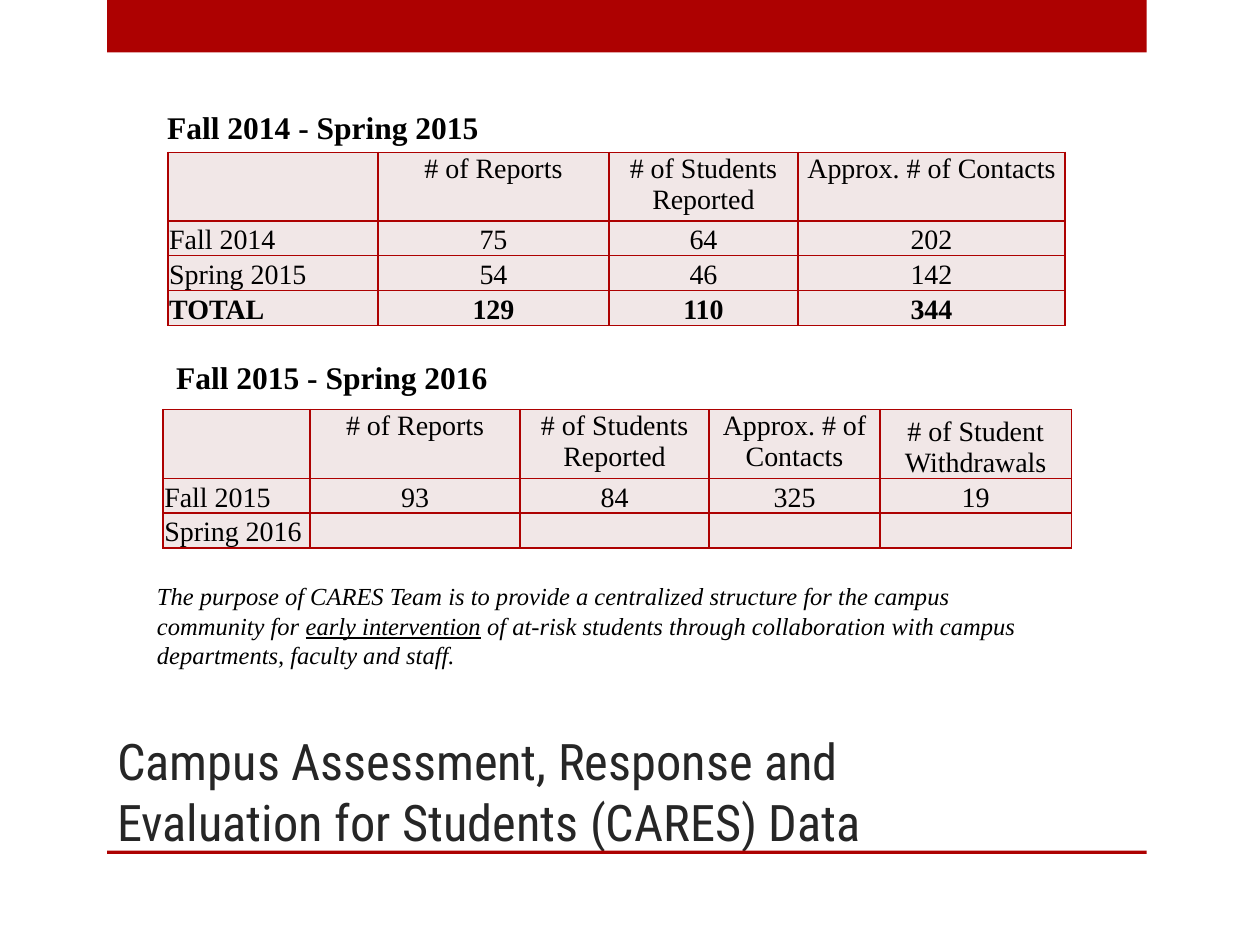
from lxml import etree
from pptx import Presentation
from pptx.dml.color import RGBColor
from pptx.enum import shapes, text
from pptx.oxml import ns
from pptx.util import Pt

COLORS = {"red": "AD0101", "cell": "F1E7E7", "title": "262626", "text": "000000"}
SERIF = "Times New Roman"
CENTER = text.PP_ALIGN.CENTER
TOP, BOTTOM = text.MSO_ANCHOR.TOP, text.MSO_ANCHOR.BOTTOM

YEAR_1 = [
    ["", "# of Reports", "# of Students Reported", "Approx. # of Contacts"],
    ["Fall 2014", "75", "64", "202"],
    ["Spring 2015", "54", "46", "142"],
    ["TOTAL", "129", "110", "344"],
]
YEAR_2 = [
    ["", "# of Reports", "# of Students Reported", "Approx. # of Contacts",
     "# of Student Withdrawals"],
    ["Fall 2015", "93", "84", "325", "19"],
    ["Spring 2016", "", "", "", ""],
]
PURPOSE = [
    ("The purpose of CARES Team is to provide a centralized structure for the "
     "campus community for ", False),
    ("early intervention", True),
    (" of at-risk students through collaboration with campus departments, "
     "faculty and staff.", False),
]


def rgb(name):
    return RGBColor.from_string(COLORS[name])


def add_run(p, content, size=16, font=SERIF, color="text", bold=False,
            italic=False, underline=False):
    r = p.add_run()
    r.text = content
    f = r.font
    f.size, f.name, f.bold, f.italic, f.underline = Pt(size), font, bold, italic, underline
    f.color.rgb = rgb(color)


def add_bar(s, x, y, w, h):
    bar = s.shapes.add_shape(shapes.MSO_SHAPE.RECTANGLE, Pt(x), Pt(y), Pt(w), Pt(h))
    bar.shadow.inherit = False
    bar.fill.solid()
    bar.fill.fore_color.rgb = rgb("red")
    bar.line.fill.background()


def place_title(s, x, y, w, h, content):
    sp = s.shapes.title
    sp.left, sp.top, sp.width, sp.height = Pt(x), Pt(y), Pt(w), Pt(h)
    tf = sp.text_frame
    tf.word_wrap = True
    tf.auto_size = text.MSO_AUTO_SIZE.NONE
    tf.vertical_anchor = BOTTOM
    p = tf.paragraphs[0]
    p.alignment = text.PP_ALIGN.LEFT
    p.line_spacing = Pt(35)
    add_run(p, content, size=28.8, font="Roboto Condensed", color="title")


def add_text(s, x, y, w, h, runs, **fmt):
    """Add a wrapped text box; runs are (text, underlined) pairs."""
    tf = s.shapes.add_textbox(Pt(x), Pt(y), Pt(w), Pt(h)).text_frame
    tf.word_wrap = True
    for content, underline in runs:
        add_run(tf.paragraphs[0], content, underline=underline, **fmt)


def set_borders(cell, color="red", width=1):
    tc_pr = cell._tc.get_or_add_tcPr()
    for i, side in enumerate(("a:lnL", "a:lnR", "a:lnT", "a:lnB")):
        ln = etree.Element(ns.qn(side), w=str(Pt(width)))
        fill = etree.SubElement(ln, ns.qn("a:solidFill"))
        etree.SubElement(fill, ns.qn("a:srgbClr"), val=COLORS[color])
        tc_pr.insert(i, ln)


def fill_cell(cell, content, centered, anchor, bold):
    cell.margin_left = cell.margin_right = cell.margin_top = Pt(0.7)
    cell.margin_bottom = 0
    cell.vertical_anchor = anchor
    cell.fill.solid()
    cell.fill.fore_color.rgb = rgb("cell")
    set_borders(cell)
    p = cell.text_frame.paragraphs[0]
    if centered:
        p.alignment = CENTER
    if content:
        add_run(p, content, bold=bold)
    else:
        # An empty cell keeps the row low only if its end mark is sized too.
        etree.SubElement(p._p, ns.qn("a:endParaRPr"), sz="1600")


def add_data_table(s, x, y, col_widths, row_heights, rows):
    frame = s.shapes.add_table(len(rows), len(col_widths), Pt(x), Pt(y),
                               Pt(sum(col_widths)), Pt(sum(row_heights)))
    table = frame.table
    table.first_row = table.horz_banding = False
    for col, w in zip(table.columns, col_widths):
        col.width = Pt(w)
    for row, h in zip(table.rows, row_heights):
        row.height = Pt(h)
    for i, values in enumerate(rows):
        for j, value in enumerate(values):
            anchor = BOTTOM if i or value.endswith("Withdrawals") else TOP
            fill_cell(table.cell(i, j), value, j > 0, anchor, values[0] == "TOTAL")


def add_year(s, x, y, heading_dx, table_dy, heading, *table):
    """Add a heading and, table_dy below its top, the year's table."""
    add_text(s, x + heading_dx, y, 510, 28.8, [(heading, False)], size=18, bold=True)
    add_data_table(s, x, y + table_dy, *table)


def main():
    prs = Presentation()
    prs.slide_width, prs.slide_height = Pt(720), Pt(540)
    s = prs.slides.add_slide(prs.slide_layouts[5])

    add_bar(s, 61.2, 0, 594, 30)
    add_bar(s, 61.2, 486, 594, 2)
    place_title(s, 59.8, 400.3, 534.2, 90,
                "Campus Assessment, Response and Evaluation for Students (CARES) Data")
    add_year(s, 96, 58.3, -7.5, 28.8, "Fall 2014 - Spring 2015",
             [120, 132, 108, 152.6], [36.6] + [18.4] * 3, YEAR_1)
    add_year(s, 93.2, 201, 0.4, 33, "Fall 2015 - Spring 2016",
             [84, 120, 108, 97.7, 109.3], [39.4, 19.8, 19.8], YEAR_2)
    add_text(s, 82.6, 328.6, 529.2, 58.7, PURPOSE, size=14, italic=True)
    prs.save("out.pptx")


if __name__ == "__main__":
    main()
